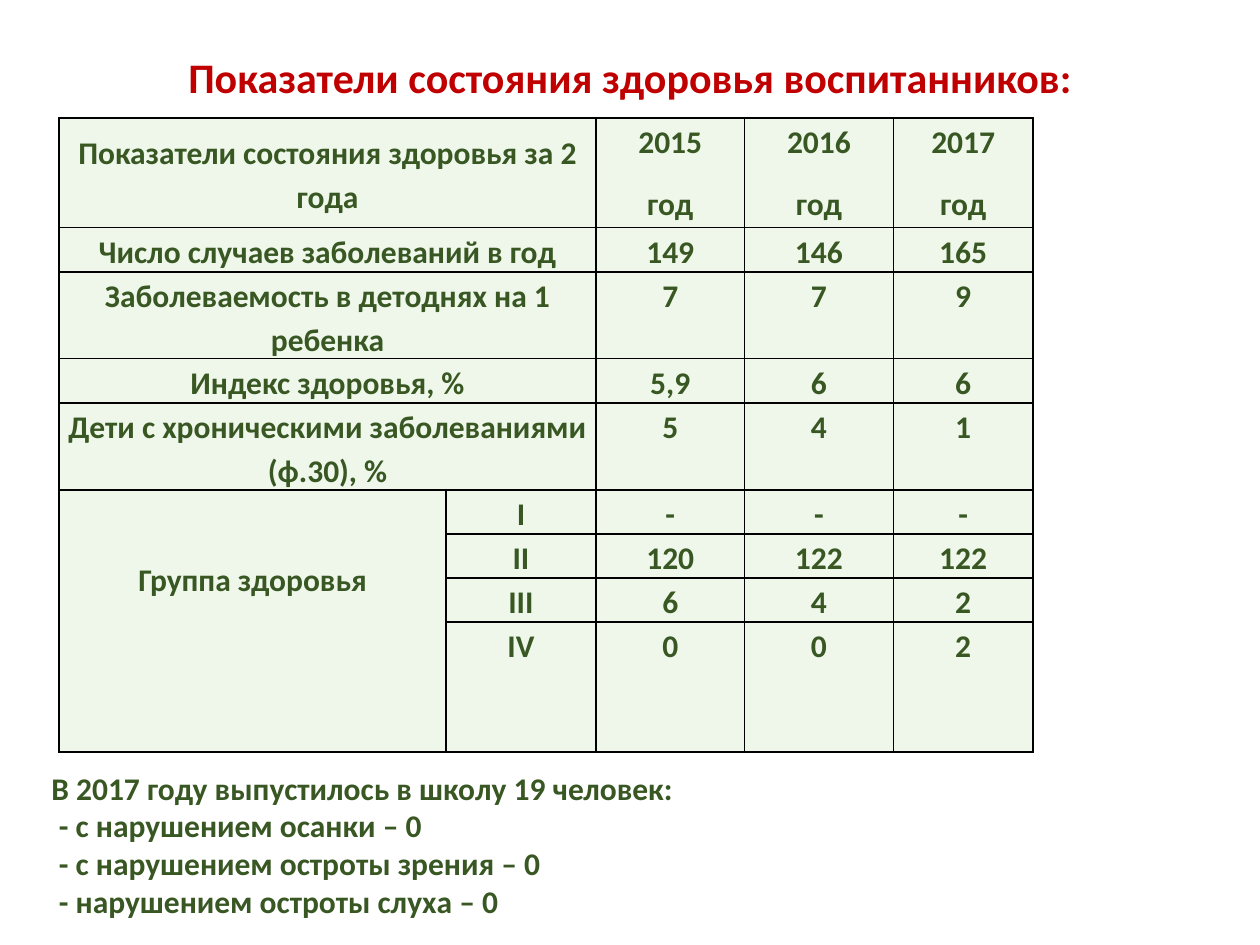
from dataclasses import dataclass

from lxml.etree import SubElement
from pptx import Presentation
from pptx.dml.color import RGBColor
from pptx.enum.text import MSO_ANCHOR, MSO_AUTO_SIZE, PP_ALIGN
from pptx.oxml.ns import qn
from pptx.util import Inches, Pt

WIDTH, HEIGHT = 10, 7.5
GREEN, RED, PALE, BLACK = "385723", "C00000", "EEF7E9", "000000"
COLS = [3.07, 1.19, 1.18, 1.18, 1.11]
ROWS = [0.87, 0.35, 0.69, 0.35, 0.69, 0.35, 0.35, 0.35, 0.35, 0.34, 0.34]
GROUP_TOP, GROUP_END = 5, 8


@dataclass
class Box:
    """Place as shares of the slide's width and height."""
    x: float
    y: float
    w: float
    h: float

    def emu(self) -> tuple:
        return (Inches(self.x * WIDTH), Inches(self.y * HEIGHT),
                Inches(self.w * WIDTH), Inches(self.h * HEIGHT))


@dataclass
class Indicator:
    label: str
    values: list[str]


INDICATORS = [
    Indicator("Показатели состояния здоровья за 2 года",
              ["2015\nгод", "2016\nгод", "2017\nгод"]),
    Indicator("Число случаев заболеваний в год", ["149", "146", "165"]),
    Indicator("Заболеваемость в детоднях на 1 ребенка", ["7", "7", "9"]),
    Indicator("Индекс здоровья, %", ["5,9", "6", "6"]),
    Indicator("Дети с хроническими заболеваниями (ф.30), %", ["5", "4", "1"]),
]
GROUPS = [
    Indicator("I", ["-", "-", "-"]),
    Indicator("II", ["120", "122", "122"]),
    Indicator("III", ["6", "4", "2"]),
    Indicator("IV", ["0", "0", "2"]),
]
GRADUATES = [
    "В 2017 году выпустилось в школу 19 человек:",
    "- с нарушением осанки – 0",
    "- с нарушением остроты зрения – 0",
    "- нарушением остроты слуха – 0",
]


def rgb(color: str) -> RGBColor:
    return RGBColor.from_string(color)


def apply(obj, values: dict) -> None:
    for name, value in values.items():
        setattr(obj, name, value)


def write(tf, lines: list[str], size: int, color: str, paragraph: dict) -> None:
    for i, line in enumerate(lines):
        p = tf.add_paragraph() if i else tf.paragraphs[0]
        apply(p, paragraph)
        r = p.add_run()
        r.text = line
        apply(r.font, {"size": Pt(size), "bold": True, "name": "Calibri"})
        r.font.color.rgb = rgb(color)


def set_borders(cell, edges: str) -> None:
    """Draw the edges named by letter (L, R, T, B) and clear the others."""
    tc_pr = cell._tc.get_or_add_tcPr()
    for edge in "LRTB":
        ln = SubElement(tc_pr, qn(f"a:ln{edge}"), w=str(Pt(1)))
        if edge in edges:
            SubElement(SubElement(ln, qn("a:solidFill")), qn("a:srgbClr"), val=BLACK)
        else:
            SubElement(ln, qn("a:noFill"))


def edges_at(row: int, col: int) -> str:
    last = len(ROWS) - 1
    top = row <= (GROUP_TOP if col == 0 else GROUP_END)
    bottom = row == last or row < (GROUP_TOP if col == 0 else GROUP_END)
    return "LR" + "T" * top + "B" * bottom


def fill_cell(cell, text: str, is_label: bool) -> None:
    side = Inches(0.07 if is_label else 0)
    apply(cell, {"margin_left": side, "margin_right": side,
                 "vertical_anchor": MSO_ANCHOR.MIDDLE if is_label else MSO_ANCHOR.TOP})
    write(cell.text_frame, text.split("\n"), 18, GREEN,
          {"alignment": PP_ALIGN.CENTER, "line_spacing": 1.15, "space_after": Pt(10)})


def add_health_table(s, box: Box) -> None:
    table = s.shapes.add_table(len(ROWS), len(COLS), *box.emu()).table
    apply(table, {"first_row": False, "horz_banding": False})
    for column, width in zip(table.columns, COLS):
        column.width = Inches(width)
    for row, height in zip(table.rows, ROWS):
        row.height = Inches(height)

    for i in range(len(ROWS)):
        for j in range(len(COLS)):
            cell = table.cell(i, j)
            apply(cell, {"margin_top": 0, "margin_bottom": 0})
            set_borders(cell, edges_at(i, j))
            cell.fill.solid()
            cell.fill.fore_color.rgb = rgb(PALE)

    for i, indicator in enumerate(INDICATORS + GROUPS):
        label_col = 0 if i < GROUP_TOP else 1
        if label_col == 0:
            table.cell(i, 0).merge(table.cell(i, 1))
        fill_cell(table.cell(i, label_col), indicator.label, True)
        for j, value in enumerate(indicator.values, start=2):
            fill_cell(table.cell(i, j), value, False)
    table.cell(GROUP_TOP, 0).merge(table.cell(GROUP_END, 0))
    fill_cell(table.cell(GROUP_TOP, 0), "Группа здоровья", True)


def add_title(s, text: str, box: Box) -> None:
    title = s.shapes.title
    apply(title, dict(zip(("left", "top", "width", "height"), box.emu())))
    tf = title.text_frame
    apply(tf, {"word_wrap": True, "auto_size": MSO_AUTO_SIZE.NONE,
               "vertical_anchor": MSO_ANCHOR.TOP})
    write(tf, [text], 24, RED, {"alignment": PP_ALIGN.CENTER})


def add_graduates(s, box: Box) -> None:
    tf = s.shapes.add_textbox(*box.emu()).text_frame
    apply(tf, {"word_wrap": True, "vertical_anchor": MSO_ANCHOR.BOTTOM})
    write(tf, GRADUATES, 18, GREEN, {"alignment": PP_ALIGN.LEFT})
    for p in tf.paragraphs[1:]:
        p._p.get_or_add_pPr().set("marL", str(Inches(0.06)))


def main() -> None:
    prs = Presentation()
    apply(prs, {"slide_width": Inches(WIDTH), "slide_height": Inches(HEIGHT)})
    s = prs.slides.add_slide(prs.slide_layouts[5])
    add_title(s, "Показатели состояния здоровья воспитанников:",
              Box(0.059, 0.048, 0.882, 0.067))
    add_graduates(s, Box(0.031, 0.764, 0.781, 0.216))
    add_health_table(s, Box(0.047, 0.125, 0.773, 0.669))
    prs.save("out.pptx")


if __name__ == "__main__":
    main()
